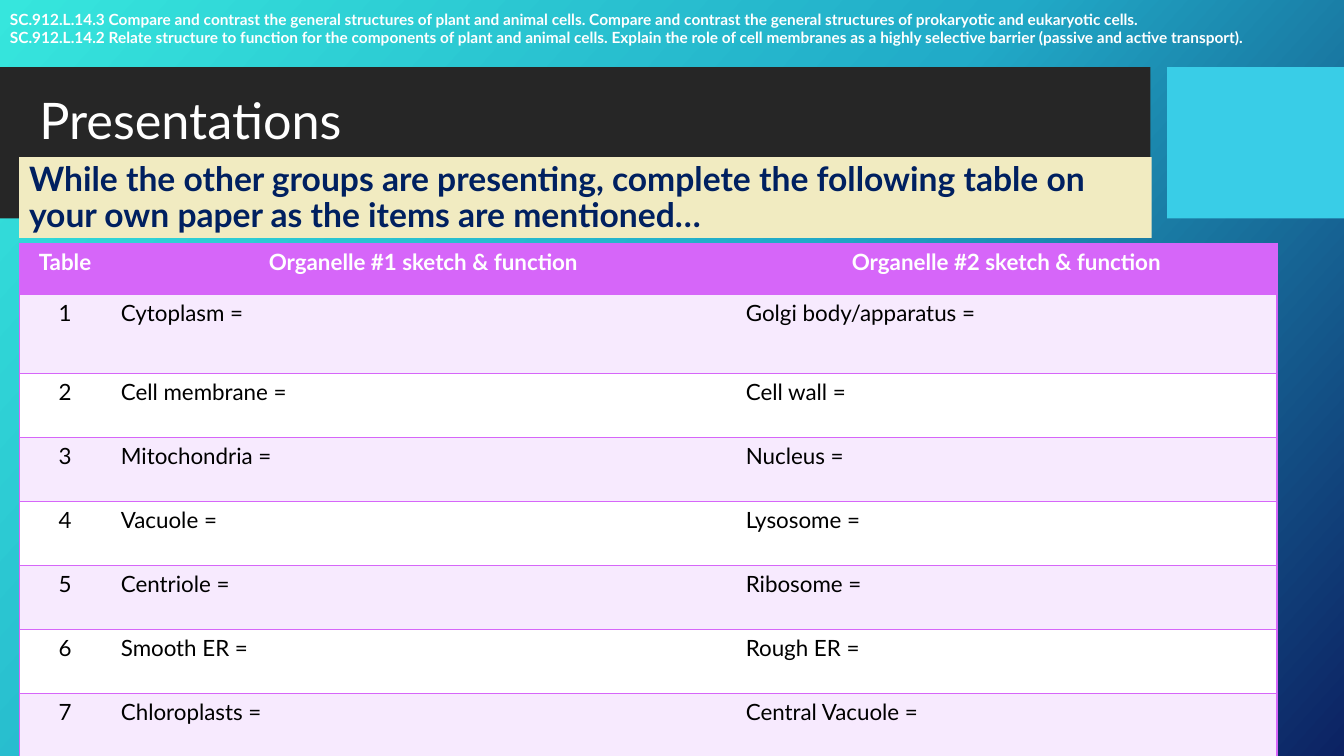
from copy import deepcopy

from pptx import Presentation
from pptx.dml.color import RGBColor
from pptx.enum.shapes import MSO_SHAPE
from pptx.enum.text import MSO_ANCHOR, PP_ALIGN
from pptx.oxml import parse_xml
from pptx.oxml.ns import nsdecls, qn
from pptx.util import Pt

FONT = "Lato"
WHITE = RGBColor(0xFF, 0xFF, 0xFF)
BLACK = RGBColor(0, 0, 0)
DARK = RGBColor(0x26, 0x26, 0x26)
CYAN = RGBColor(0x39, 0xCD, 0xE7)
CREAM = RGBColor(0xF1, 0xEB, 0xC1)
NAVY = RGBColor(0x00, 0x20, 0x60)
PURPLE = RGBColor(0xD6, 0x66, 0xF9)
LILAC = RGBColor(0xF7, 0xEA, 0xFE)
STOPS = [(0, RGBColor(0x36, 0xE6, 0xDD)),
         (0.5, RGBColor(0x21, 0xAB, 0xC8)),
         (1, RGBColor(0x0C, 0x22, 0x63))]

CODES = [
    "SC.912.L.14.3 Compare and contrast the general structures of plant and "
    "animal cells. Compare and contrast the general structures of prokaryotic "
    "and eukaryotic cells.",
    "SC.912.L.14.2 Relate structure to function for the components of plant "
    "and animal cells. Explain the role of cell membranes as a highly "
    "selective barrier (passive and active transport).",
]
TASK = ("While the other groups are presenting, complete the following table "
        "on your own paper as the items are mentioned…")
HEADS = ["Table", "Organelle #1 sketch & function",
         "Organelle #2 sketch & function"]
PAIRS = [
    ("Cytoplasm", "Golgi body/apparatus"),
    ("Cell membrane", "Cell wall"),
    ("Mitochondria", "Nucleus"),
    ("Vacuole", "Lysosome"),
    ("Centriole", "Ribosome"),
    ("Smooth ER", "Rough ER"),
    ("Chloroplasts", "Central Vacuole"),
]
COLS = [65.5, 446.4, 386.6]
ROWS = [36.7, 56.2] + [45.7] * 6


def paint(slide):
    """Fill the background with the slanted gradient."""
    fill = slide.background.fill
    fill.gradient()
    fill.gradient_angle = 318
    stops = slide.element.find(".//" + qn("a:gsLst"))
    stops.append(deepcopy(stops[0]))
    for stop, (pos, color) in zip(fill.gradient_stops, STOPS):
        stop.position = pos
        stop.color.rgb = color


def style(frame, size, color, bold=False, align=PP_ALIGN.LEFT, space=None):
    for para in frame.paragraphs:
        para.alignment = align
        para.line_spacing = space
        for run in para.runs:
            font = run.font
            font.name, font.size, font.bold = FONT, Pt(size), bold
            font.color.rgb = color


def add_bar(slide, left, top, width, height, color):
    bar = slide.shapes.add_shape(MSO_SHAPE.RECTANGLE, Pt(left), Pt(top),
                                 Pt(width), Pt(height))
    bar.shadow.inherit = False
    bar.fill.solid()
    bar.fill.fore_color.rgb = color
    bar.line.fill.background()
    return bar


def set_title(slide, text):
    title = slide.shapes.title
    title.left, title.top = Pt(20.9), Pt(50.4)
    title.width, title.height = Pt(756.7), Pt(75.6)
    frame = title.text_frame
    frame.text = text
    frame.word_wrap = True
    frame.vertical_anchor = MSO_ANCHOR.MIDDLE
    style(frame, 36, WHITE, space=0.9)
    # Bring the title in front of the bars
    slide.shapes.element.append(title.element)


def add_task(slide):
    box = add_bar(slide, 13.7, 112.3, 809, 57.6, CREAM)
    frame = box.text_frame
    frame.text = TASK
    frame.word_wrap = True
    frame.vertical_anchor = MSO_ANCHOR.TOP
    style(frame, 24, NAVY, bold=True, space=0.9)


def add_codes(slide):
    box = slide.shapes.add_textbox(0, Pt(3.6), Pt(960), Pt(47.5))
    frame = box.text_frame
    frame.word_wrap = True
    frame.text = "\n".join(CODES)
    style(frame, 11, WHITE, bold=True)


def set_edges(cell, shown):
    """Draw the shown sides in purple and hide the others."""
    props = cell._tc.get_or_add_tcPr()
    for side in "LRTB":
        ink = (f'<a:solidFill><a:srgbClr val="{PURPLE}"/></a:solidFill>'
               if side in shown else "<a:noFill/>")
        props.append(parse_xml(
            f'<a:ln{side} {nsdecls("a")} w="12700">{ink}</a:ln{side}>'))


def add_grid(slide):
    rows = [HEADS] + [[str(num)] + [f"{name} =" for name in pair]
                      for num, pair in enumerate(PAIRS, 1)]
    grid = slide.shapes.add_table(len(ROWS), len(COLS), Pt(13.7), Pt(173.8),
                                  Pt(sum(COLS)), Pt(sum(ROWS))).table
    for col, width in zip(grid.columns, COLS):
        col.width = Pt(width)
    for r, texts in enumerate(rows):
        grid.rows[r].height = Pt(ROWS[r])
        for c, text in enumerate(texts):
            head = r == 0
            cell = grid.cell(r, c)
            cell.text = text
            set_edges(cell, ["LTB", "TB", "RTB"][c])
            cell.fill.solid()
            cell.fill.fore_color.rgb = (
                PURPLE if head else LILAC if r % 2 else WHITE)
            style(cell.text_frame, 16, WHITE if head else BLACK, head,
                  PP_ALIGN.CENTER if head or c == 0 else PP_ALIGN.LEFT)


def main():
    deck = Presentation()
    deck.slide_width, deck.slide_height = Pt(960), Pt(540)
    slide = deck.slides.add_slide(deck.slide_layouts[5])
    paint(slide)
    # Title band
    add_bar(slide, 0, 48, 821.8, 108, DARK)
    add_bar(slide, 833.6, 48, 126.4, 108, CYAN)
    set_title(slide, "Presentations")
    # Task, standards and table
    add_task(slide)
    add_codes(slide)
    add_grid(slide)
    deck.save("out.pptx")


if __name__ == "__main__":
    main()
